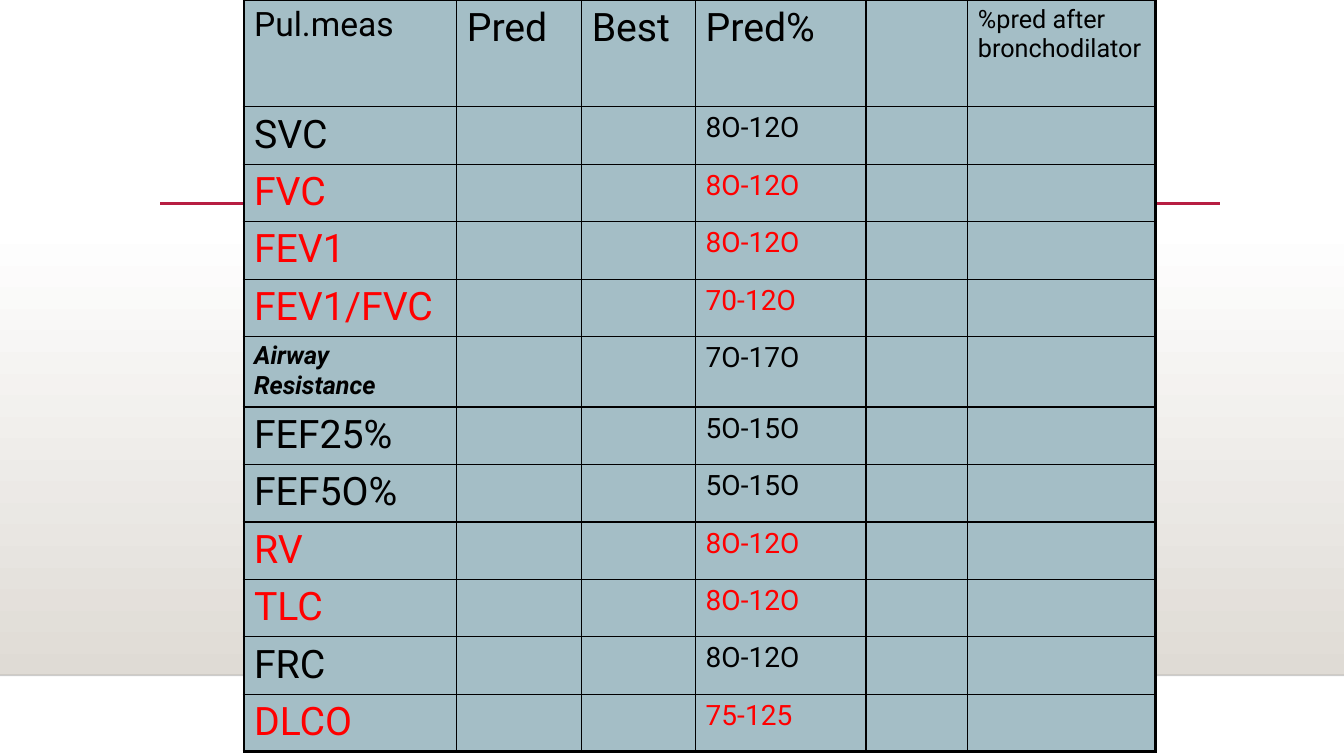
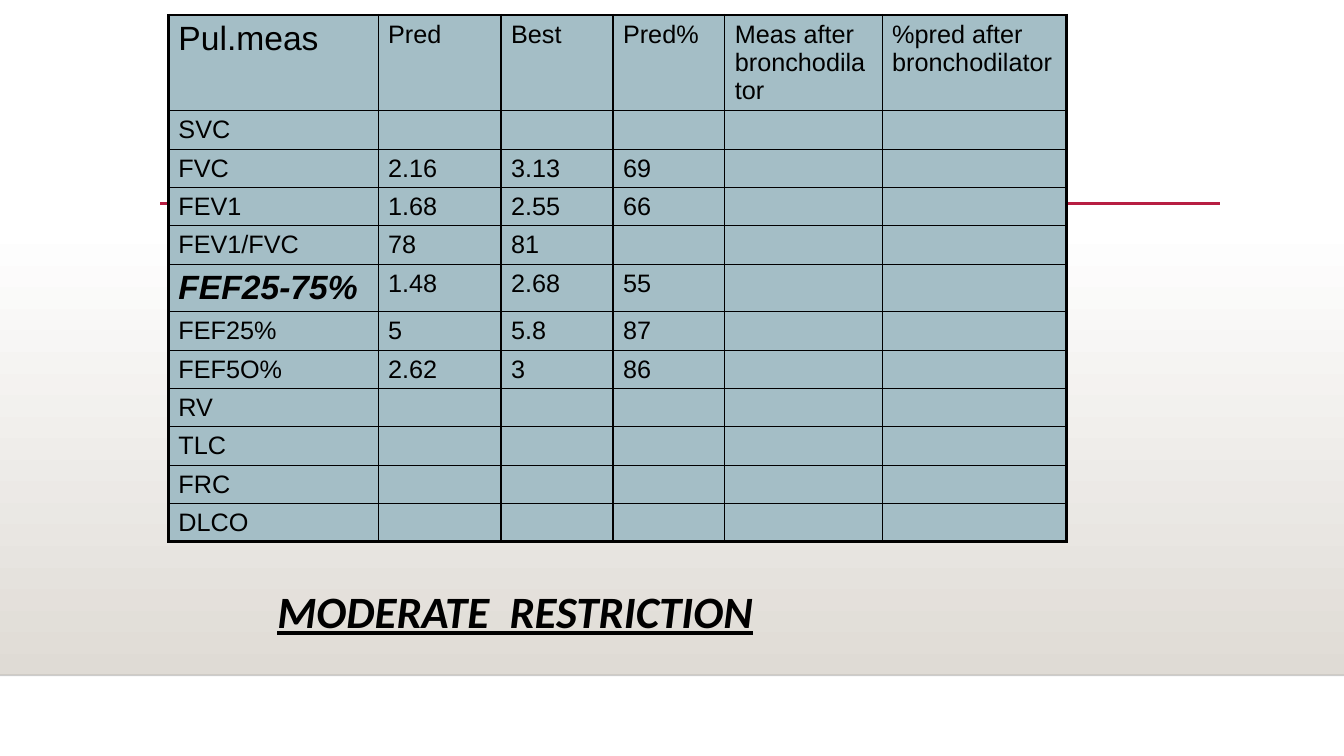
"""Build two slides of lung function tables: the normal ranges and a moderate restriction."""
from lxml.etree import SubElement
from pptx import Presentation
from pptx.dml.color import RGBColor
from pptx.enum.shapes import MSO_CONNECTOR, MSO_SHAPE
from pptx.enum.text import MSO_ANCHOR, PP_ALIGN
from pptx.oxml.ns import qn
from pptx.util import Inches, Pt

BLACK = RGBColor(0x00, 0x00, 0x00)
WHITE = RGBColor(0xFF, 0xFF, 0xFF)
RED = RGBColor(0xFF, 0x00, 0x00)
CRIMSON = RGBColor(0xB7, 0x1E, 0x42)
SAND = RGBColor(0xDF, 0xDB, 0xD5)
CELL_BLUE = RGBColor(0xA4, 0xBE, 0xC6)

TITLE_ONLY, BLANK = 5, 6
THIN, THICK = 1, 2.25

NORMAL_HEADER = ["Pul.meas", "Pred", "Best", "Pred%", "", "%pred after bronchodilator"]
NORMAL_RANGES = [
    ("SVC", "8O-12O", BLACK),
    ("FVC", "8O-12O", RED),
    ("FEV1", "8O-12O", RED),
    ("FEV1/FVC", "70-12O", RED),
    ("Airway Resistance", "7O-17O", BLACK),
    ("FEF25%", "5O-15O", BLACK),
    ("FEF5O%", "5O-15O", BLACK),
    ("RV", "8O-12O", RED),
    ("TLC", "8O-12O", RED),
    ("FRC", "8O-12O", BLACK),
    ("DLCO", "75-125", RED),
]
RESTRICTION_ROWS = [
    ["Pul.meas", "Pred", "Best", "Pred%", "Meas after bronchodilator",
     "%pred after bronchodilator"],
    ["SVC"],
    ["FVC", "2.16", "3.13", "69"],
    ["FEV1", "1.68", "2.55", "66"],
    ["FEV1/FVC", "78", "81"],
    ["FEF25-75%", "1.48", "2.68", "55"],
    ["FEF25%", "5", "5.8", "87"],
    ["FEF5O%", "2.62", "3", "86"],
    ["RV"],
    ["TLC"],
    ["FRC"],
    ["DLCO"],
]


class LungDeck:
    """Hold the shared style and the current page."""

    def __init__(self):
        self.deck = Presentation()
        self.deck.slide_width = Inches(13.33)
        self.deck.slide_height = Inches(7.5)
        self.page = None

    def new_page(self, layout):
        first = self.page is None
        self.page = self.deck.slides.add_slide(self.deck.slide_layouts[layout])
        if first:
            self.decorate_master()

    def decorate_master(self):
        master_tree = self.deck.slide_master.shapes._spTree
        for shape in (
            self.band(2.21, 4.49),
            self.rule(0, 13.33, 6.7, BLACK, 1, opacity=20),
            self.rule(1.59, 12.1, 2.02, CRIMSON, 2.5),
        ):
            master_tree.append(shape._element)

    def band(self, top, height):
        band = self.page.shapes.add_shape(
            MSO_SHAPE.RECTANGLE, 0, Inches(top), self.deck.slide_width, Inches(height))
        band.shadow.inherit = False
        band.line.fill.background()
        band.fill.gradient()
        band.fill.gradient_angle = 270
        for stop, color in zip(band.fill.gradient_stops, (WHITE, SAND)):
            stop.color.rgb = color
        for stop, position in zip(band.fill.gradient_stops, (0, 1)):
            stop.position = position
        return band

    def rule(self, start, end, top, color, width, opacity=100):
        rule = self.page.shapes.add_connector(
            MSO_CONNECTOR.STRAIGHT, Inches(start), Inches(top), Inches(end), Inches(top))
        rule.line.color.rgb = color
        rule.line.width = Pt(width)
        properties = rule._element.spPr
        if opacity < 100:
            paint = properties.find(".//" + qn("a:srgbClr"))
            SubElement(paint, qn("a:alpha"), val=str(opacity * 1000))
        SubElement(properties, qn("a:effectLst"))
        return rule

    def title(self, text, left, top, width, height):
        title = self.page.shapes.title
        title.left, title.top = Inches(left), Inches(top)
        title.width, title.height = Inches(width), Inches(height)
        title.text_frame.text = text
        title.text_frame.word_wrap = True
        title.text_frame.vertical_anchor = MSO_ANCHOR.TOP
        para = title.text_frame.paragraphs[0]
        para.alignment = PP_ALIGN.LEFT
        para.line_spacing = 0.9
        self.style(para, "Calibri", 32, strong=True)
        para.font.underline = True

    def table(self, left, top, widths, heights, rows, font):
        frame = self.page.shapes.add_table(
            len(heights), len(widths), Inches(left), Inches(top),
            Inches(sum(widths)), Inches(sum(heights)))
        table = frame.table
        table.first_row = table.horz_banding = False
        for column, width in zip(table.columns, widths):
            column.width = Inches(width)
        for row, height in zip(table.rows, heights):
            row.height = Inches(height)
        last_row, last_column = len(heights) - 1, len(widths) - 1
        for r, texts in enumerate(rows):
            for c in range(len(widths)):
                cell = table.cell(r, c)
                cell.text = texts[c] if c < len(texts) else ""
                self.style(cell.text_frame.paragraphs[0], font, 18)
                self.borders(cell, L=c == 0, R=c == last_column, T=r == 0, B=r == last_row)
                cell.fill.solid()
                cell.fill.fore_color.rgb = CELL_BLUE
        return table

    def borders(self, cell, **outer_sides):
        properties = cell._tc.get_or_add_tcPr()
        for side, outer in outer_sides.items():
            line = SubElement(properties, qn("a:ln" + side),
                              w=str(Pt(THICK if outer else THIN)))
            fill = SubElement(line, qn("a:solidFill"))
            SubElement(fill, qn("a:srgbClr"), val=str(BLACK))

    def style(self, para, font, size, color=BLACK, strong=False):
        para.font.name = font
        para.font.size = Pt(size)
        para.font.color.rgb = color
        para.font.bold = para.font.italic = strong

    def restyle(self, table, row, column, font, size, color=BLACK, strong=False):
        para = table.cell(row, column).text_frame.paragraphs[0]
        self.style(para, font, size, color, strong)


def normal_page(lung):
    lung.new_page(BLANK)
    rows = [NORMAL_HEADER] + [[name, "", "", limits] for name, limits, _ in NORMAL_RANGES]
    heights = [1.06] + [0.7 if name == "Airway Resistance" else 0.57
                        for name, _, _ in NORMAL_RANGES]
    table = lung.table(2.42, 0, [2.11, 1.24, 1.13, 1.69, 1.01, 1.86], heights, rows, "Roboto")
    for column, size in enumerate((24, 28, 28, 28)):
        lung.restyle(table, 0, column, "Roboto", size)
    for row, (name, _, color) in enumerate(NORMAL_RANGES, start=1):
        strong = name == "Airway Resistance"
        lung.restyle(table, row, 0, "Roboto", 18 if strong else 28, color, strong)
        lung.restyle(table, row, 3, "Roboto", 20, color)


def restriction_page(lung):
    lung.new_page(TITLE_ONLY)
    lung.title("MODERATE  RESTRICTION", 2.65, 5.8, 9.45, 0.83)
    heights = [0.95] + [0.47 if row[0] == "FEF25-75%" else 0.38
                        for row in RESTRICTION_ROWS[1:]]
    table = lung.table(1.67, 0.15, [2.08, 1.22, 1.11, 1.11, 1.56, 1.83], heights,
                       RESTRICTION_ROWS, "Arial")
    lung.restyle(table, 0, 0, "Arial", 24)
    lung.restyle(table, 5, 0, "Arial", 24, strong=True)


def main():
    lung = LungDeck()
    normal_page(lung)
    restriction_page(lung)
    lung.deck.save("out.pptx")


if __name__ == "__main__":
    main()
